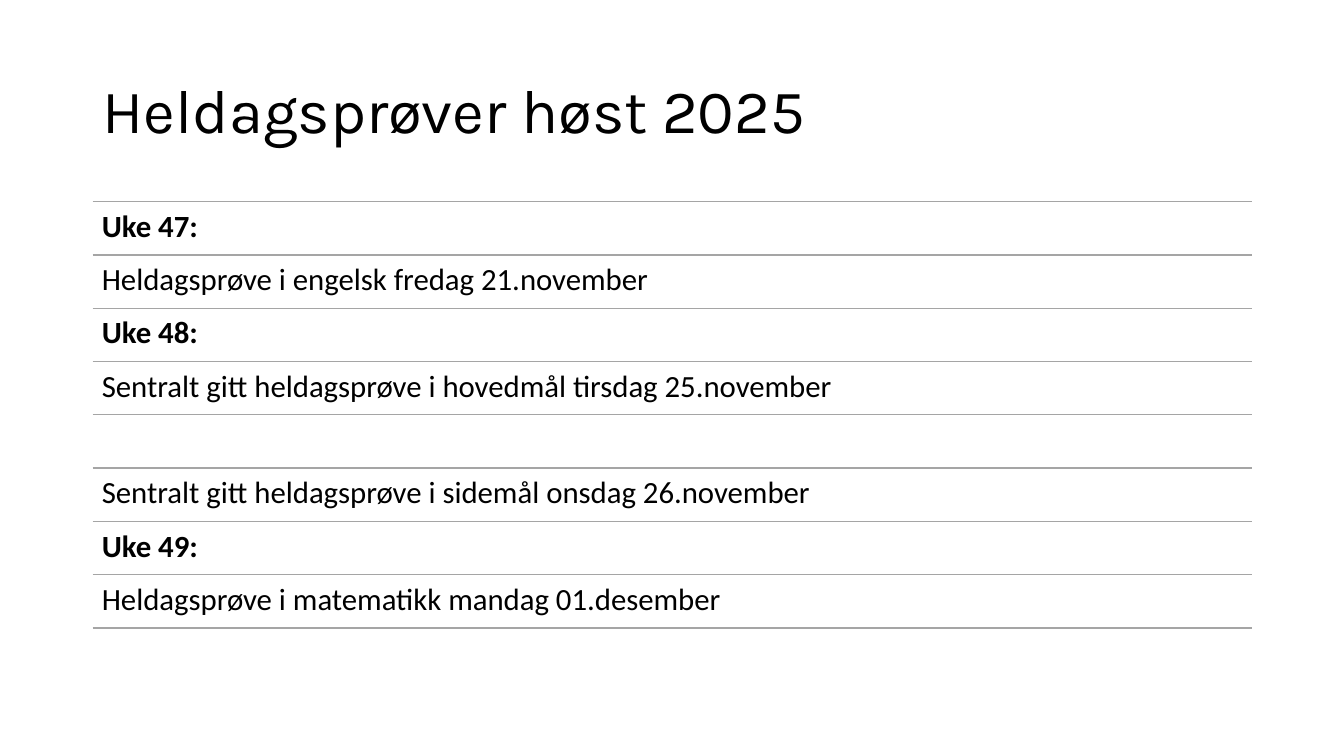
"""Build the slide listing the full-day exams of autumn 2025."""
import dataclasses
import typing

import lxml.etree
import pptx
import pptx.dml.color
import pptx.enum.shapes
import pptx.enum.text
import pptx.oxml.ns
import pptx.slide
import pptx.util


@dataclasses.dataclass(frozen=True)
class Theme:
    ink: str = "000000"
    rule: str = "A5A5A5"
    title_font: str = "Karla"
    body_font: str = "Calibri"
    title_size: float = 44
    body_size: float = 22
    rule_width: float = 1


@dataclasses.dataclass(frozen=True)
class Grid:
    left: float = 0.92
    width: float = 11.5
    top: float = 2
    row: float = 4.23 / 8

    def y(self, row: int) -> float:
        return self.top + row * self.row


@dataclasses.dataclass(frozen=True)
class Entry:
    row: int
    text: str
    bold: bool = False


THEME = Theme()
GRID = Grid()
TITLE_TOP, TITLE_HEIGHT = 0.4, 1.45
ROW_COUNT = 8
ENTRIES = [
    Entry(0, "Uke 47:", True),
    Entry(1, "Heldagsprøve i engelsk fredag 21.november"),
    Entry(2, "Uke 48:", True),
    Entry(3, "Sentralt gitt heldagsprøve i hovedmål tirsdag 25.november"),
    Entry(5, "Sentralt gitt heldagsprøve i sidemål onsdag 26.november"),
    Entry(6, "Uke 49:", True),
    Entry(7, "Heldagsprøve i matematikk mandag 01.desember"),
]


def apply(target: typing.Any, values: dict[str, typing.Any]) -> None:
    for name, value in values.items():
        setattr(target, name, value)


def add_text(s: pptx.slide.Slide, text: str, top: float, height: float,
             frame: dict[str, typing.Any], font: dict[str, typing.Any]) -> None:
    inch = pptx.util.Inches
    sp = s.shapes.add_textbox(inch(GRID.left), inch(top), inch(GRID.width), inch(height))
    tf = sp.text_frame
    apply(tf, {"word_wrap": True, **frame})
    p = tf.paragraphs[0]
    p.line_spacing = 0.9
    r = p.add_run()
    r.text = text
    apply(r.font, font)
    r.font.color.rgb = pptx.dml.color.RGBColor.from_string(THEME.ink)


def add_title(s: pptx.slide.Slide, text: str) -> None:
    frame = {"vertical_anchor": pptx.enum.text.MSO_ANCHOR.MIDDLE}
    font = {"name": THEME.title_font, "size": pptx.util.Pt(THEME.title_size)}
    add_text(s, text, TITLE_TOP, TITLE_HEIGHT, frame, font)


def add_entry(s: pptx.slide.Slide, entry: Entry) -> None:
    sides = ("left", "top", "right", "bottom")
    frame = {f"margin_{side}": pptx.util.Inches(0.09) for side in sides}
    font = {"name": THEME.body_font, "size": pptx.util.Pt(THEME.body_size), "bold": entry.bold}
    add_text(s, entry.text, GRID.y(entry.row), GRID.row, frame, font)


def add_rule(s: pptx.slide.Slide, row: int) -> None:
    x1, x2, y = map(pptx.util.Inches, (GRID.left, GRID.left + GRID.width, GRID.y(row)))
    c = s.shapes.add_connector(pptx.enum.shapes.MSO_CONNECTOR.STRAIGHT, x1, y, x2, y)
    c.line.width = pptx.util.Pt(THEME.rule_width)
    c.line.color.rgb = pptx.dml.color.RGBColor.from_string(THEME.rule)
    lxml.etree.SubElement(c._element.spPr, pptx.oxml.ns.qn("a:effectLst"))


def main() -> None:
    prs = pptx.Presentation()
    apply(prs, {"slide_width": pptx.util.Inches(13.33), "slide_height": pptx.util.Inches(7.5)})
    s = prs.slides.add_slide(prs.slide_layouts[6])
    add_title(s, "Heldagsprøver høst 2025")
    for row in range(ROW_COUNT + 1):
        add_rule(s, row)
    for entry in ENTRIES:
        add_entry(s, entry)
    prs.save("out.pptx")


if __name__ == "__main__":
    main()
